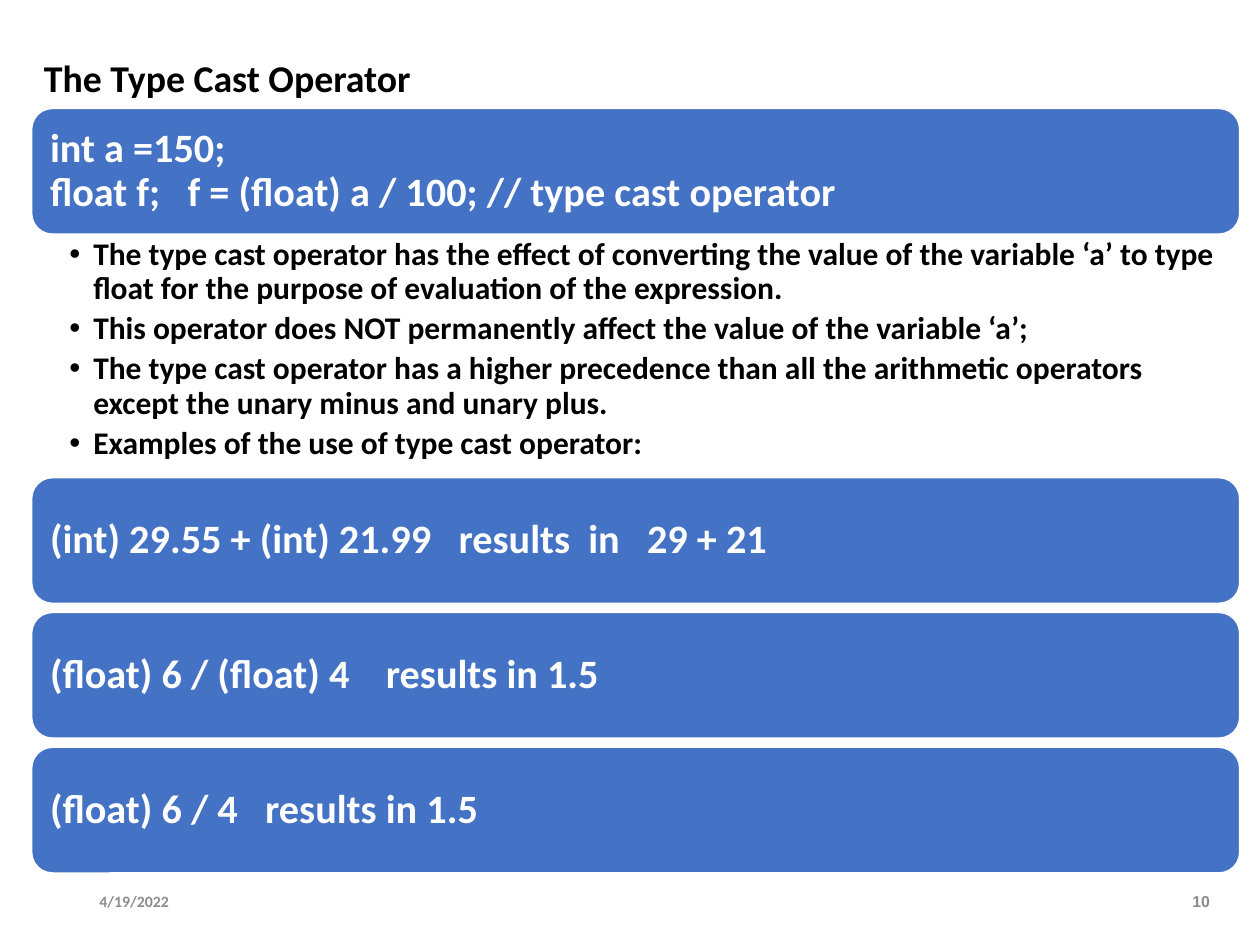
from lxml import etree
from pptx import Presentation
from pptx.dml.color import RGBColor
from pptx.enum.shapes import MSO_SHAPE as Shape
from pptx.enum.text import MSO_ANCHOR as Anchor, PP_ALIGN as Align
from pptx.oxml.ns import qn
from pptx.util import Inches, Pt

DECLARATION = "int a =150;\nfloat f;   f = (float) a / 100; // type cast operator"
EFFECTS = [
    "The type cast operator has the effect of converting the value of the variable ‘a’ to type "
    "float for the purpose of evaluation of the expression.",
    "This operator does NOT permanently affect the value of the variable ‘a’;",
    "The type cast operator has a higher precedence than all the arithmetic operators "
    "except the unary minus and unary plus.",
    "Examples of the use of type cast operator:",
]
EXAMPLES = [
    "(int) 29.55 + (int) 21.99   results  in   29 + 21",
    "(float) 6 / (float) 4    results in 1.5",
    "(float) 6 / 4   results in 1.5",
]
LEFT, WIDTH, BAND_HEIGHT, BAND_PITCH = 0.25, 9.59, 1, 1.07


def color(value):
    """Turn a hex string into a colour."""
    return RGBColor.from_string(value)


def add_bullet(paragraph, indent):
    """Give a paragraph a hanging round bullet."""
    properties = paragraph._p.get_or_add_pPr()
    properties.set("marL", str(Inches(indent)))
    properties.set("indent", str(-Inches(indent)))
    etree.SubElement(properties, qn("a:buFont"), typeface="Arial")
    etree.SubElement(properties, qn("a:buChar"), char="•")


def write(holder, paragraphs, size=18, font="Calibri", ink="000000", anchor=Anchor.TOP,
          align=Align.LEFT, insets=(0.1, 0.05, 0.1, 0.05), spacing=0.9, after=0, bullet=0):
    """Fill a shape or text box with bold paragraphs."""
    frame = holder.text_frame
    frame.word_wrap = True
    frame.vertical_anchor = anchor
    (frame.margin_left, frame.margin_top,
     frame.margin_right, frame.margin_bottom) = map(Inches, insets)
    for index, words in enumerate(paragraphs):
        paragraph = frame.add_paragraph() if index else frame.paragraphs[0]
        paragraph.text = words
        paragraph.alignment = align
        paragraph.line_spacing = spacing
        paragraph.space_after = Pt(after)
        if bullet:
            add_bullet(paragraph, bullet)
        for run in paragraph.runs:
            run.font.size = Pt(size)
            run.font.name = font
            run.font.bold = True
            run.font.color.rgb = color(ink)


def add_text(slide, box, paragraphs, **style):
    """Place a text box."""
    write(slide.shapes.add_textbox(*map(Inches, box)), paragraphs, **style)


def add_band(slide, box, code):
    """Place a rounded blue band of code."""
    band = slide.shapes.add_shape(Shape.ROUNDED_RECTANGLE, *map(Inches, box))
    band.shadow.inherit = False
    band.fill.solid()
    band.fill.fore_color.rgb = color("4472C4")
    band.line.color.rgb = color("FFFFFF")
    band.line.width = Pt(1)
    write(band, [code], size=23, ink="FFFFFF", anchor=Anchor.MIDDLE, insets=(0.1,) * 4)


def add_examples(slide, box):
    """Stack the example bands down the box."""
    left, top, width, height = box
    for row, example in enumerate(EXAMPLES):
        add_band(slide, (left, top + row * BAND_PITCH, width, height), example)


def add_footer(slide, top, height):
    """Place the date and the slide number."""
    style = dict(size=9, ink="8C8C8C", anchor=Anchor.MIDDLE, spacing=1.0)
    add_text(slide, (0.69, top, 0.95, height), ["4/19/2022"], **style)
    add_text(slide, (9.31, top, 0.39, height), ["10"], font="Arial", align=Align.RIGHT, **style)


def main():
    """Build the slide on the type cast operator."""
    deck = Presentation()
    deck.slide_width, deck.slide_height = Inches(10), Inches(7.5)
    slide = deck.slides.add_slide(deck.slide_layouts[6])
    add_text(slide, (LEFT, 0.15, 3.23, 0.7), ["The Type Cast Operator"],
             size=21.6, anchor=Anchor.BOTTOM)
    add_band(slide, (LEFT, 0.86, WIDTH, BAND_HEIGHT), DECLARATION)
    add_text(slide, (LEFT, 1.86, WIDTH, 1.93), EFFECTS,
             insets=(0.3, 0.03, 0.18, 0.03), after=3.6, bullet=0.19)
    add_examples(slide, (LEFT, 3.79, WIDTH, BAND_HEIGHT))
    add_footer(slide, 6.95, 0.4)
    deck.save("out.pptx")


if __name__ == "__main__":
    main()
